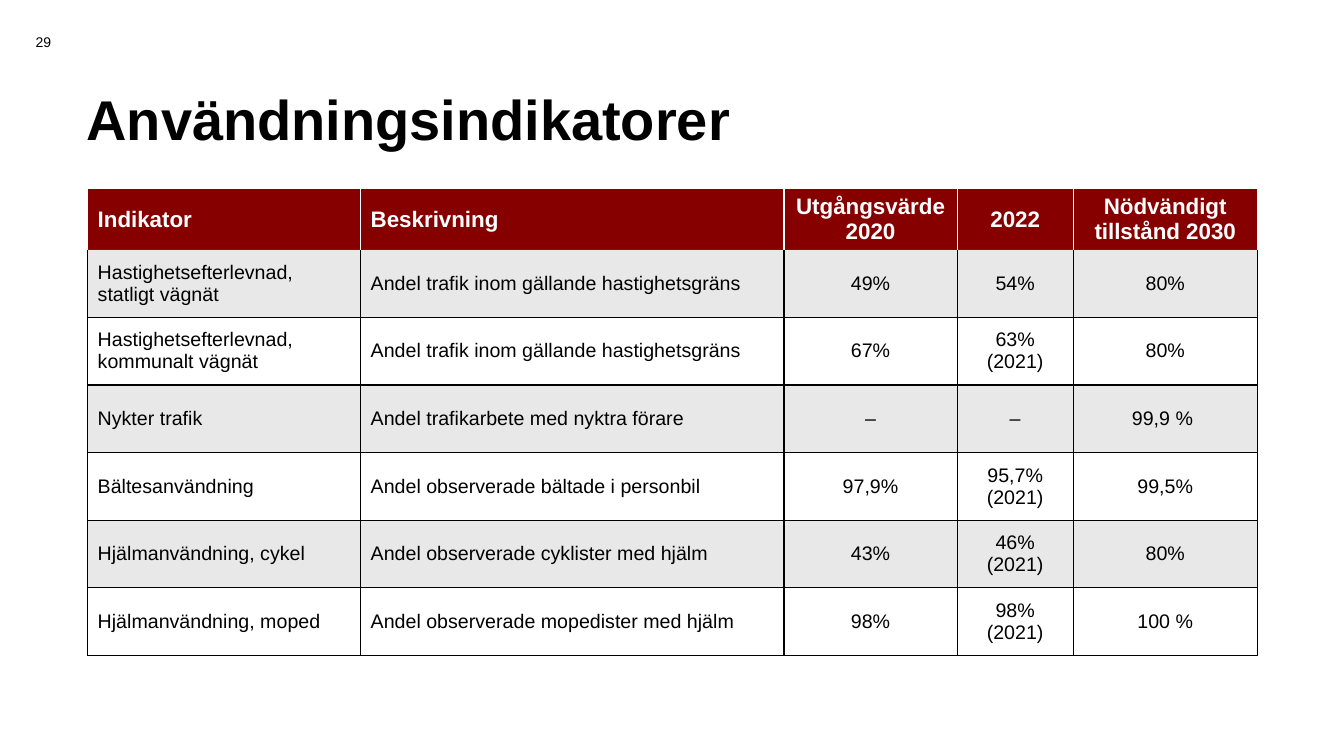
from lxml import etree
from pptx import Presentation
from pptx.dml.color import RGBColor
from pptx.enum.text import MSO_ANCHOR, PP_ALIGN
from pptx.oxml.ns import qn
from pptx.util import Pt

MID = MSO_ANCHOR.MIDDLE
LEFT, MID_X = PP_ALIGN.LEFT, PP_ALIGN.CENTER

FONT = "Arial"
INK = {"black": "000000", "white": "FFFFFF", "red": "870000", "grey": "D2D2D2"}
PLAIN = "{2D5ABB26-0587-4C30-8999-92F81FD0307C}"

TITLE = "Användningsindikatorer"
PAGE = "29"
SPEED = "Andel trafik inom gällande hastighetsgräns"
ROWS = [
    ("Indikator", "Beskrivning", "Utgångsvärde 2020", "2022", "Nödvändigt tillstånd 2030"),
    ("Hastighetsefterlevnad, \nstatligt vägnät", SPEED, "49%", "54%", "80%"),
    ("Hastighetsefterlevnad, \nkommunalt vägnät", SPEED, "67%", "63% (2021)", "80%"),
    ("Nykter trafik", "Andel trafikarbete med nyktra förare", "‒", "‒", "99,9 % "),
    ("Bältesanvändning", "Andel observerade bältade i personbil", "97,9%", "95,7% (2021)", "99,5%"),
    ("Hjälmanvändning, cykel", "Andel observerade cyklister med hjälm", "43%", "46% (2021)", "80%"),
    ("Hjälmanvändning, moped", "Andel observerade mopedister med hjälm", "98%", "98% (2021)", "100 %"),
]
WIDTHS = [195, 302.4, 123.8, 82.8, 131.6]
HEAD, BODY = 42, 48.3


def write(frame, text, size, ink, bold=False, align=LEFT, space=None):
    frame.word_wrap = True
    para = frame.paragraphs[0]
    para.alignment = align
    para.line_spacing = space
    for i, line in enumerate(text.split("\n")):
        if i:
            para.add_line_break()
        run = para.add_run()
        run.text = line
        run.font.name = FONT
        run.font.size = Pt(size)
        run.font.bold = bold
        run.font.color.rgb = RGBColor.from_string(INK[ink])


def label(slide, box, text, size, **look):
    frame = slide.shapes.add_textbox(*map(Pt, box)).text_frame
    frame.vertical_anchor = MID
    write(frame, text, size, "black", **look)


def paint(cell, ink, alpha=None):
    cell.fill.solid()
    cell.fill.fore_color.rgb = RGBColor.from_string(INK[ink])
    if alpha:
        tone = next(cell._tc.tcPr.iter(qn("a:srgbClr")))
        etree.SubElement(tone, qn("a:alpha"), val=str(alpha * 1000))


def edge(cell, sides, ink):
    for i, side in enumerate(sides):
        line = etree.Element(qn("a:ln" + side), w=str(Pt(1)))
        fill = etree.SubElement(line, qn("a:solidFill"))
        etree.SubElement(fill, qn("a:srgbClr"), val=INK[ink])
        cell._tc.tcPr.insert(i, line)


def grid(slide):
    high = HEAD + BODY * (len(ROWS) - 1)
    frame = slide.shapes.add_table(
        len(ROWS), len(WIDTHS), Pt(62.6), Pt(135), Pt(sum(WIDTHS)), Pt(high))
    table = frame.table
    table.horz_banding = False
    next(table._tbl.iter(qn("a:tableStyleId"))).text = PLAIN
    for col, wide in zip(table.columns, WIDTHS):
        col.width = Pt(wide)
    last = len(WIDTHS) - 1
    for r, row in enumerate(ROWS):
        top = r == 0
        table.rows[r].height = Pt(HEAD if top else BODY)
        for c, text in enumerate(row):
            cell = table.cell(r, c)
            cell.vertical_anchor = MID
            align = MID_X if c > 1 else LEFT
            if top:
                cell.margin_top = cell.margin_bottom = Pt(2.5)
                write(cell.text_frame, text, 16, "white", True, align)
                paint(cell, "red")
                edge(cell, "L" * (c > 0) + "R" * (c < last), "white")
            else:
                write(cell.text_frame, text, 14, "black", False, align)
                if r % 2:
                    paint(cell, "grey", 50)
                edge(cell, "LRB" if r == 1 else "LRTB", "black")


def main():
    deck = Presentation()
    deck.slide_width, deck.slide_height = Pt(960), Pt(540)
    slide = deck.slides.add_slide(deck.slide_layouts[6])
    label(slide, (54.7, 71.3, 850.3, 31.7), TITLE, 40, bold=True, space=0.9)
    label(slide, (0, 15.8, 61.9, 28.8), PAGE, 10, align=MID_X)
    grid(slide)
    deck.save("out.pptx")


if __name__ == "__main__":
    main()
